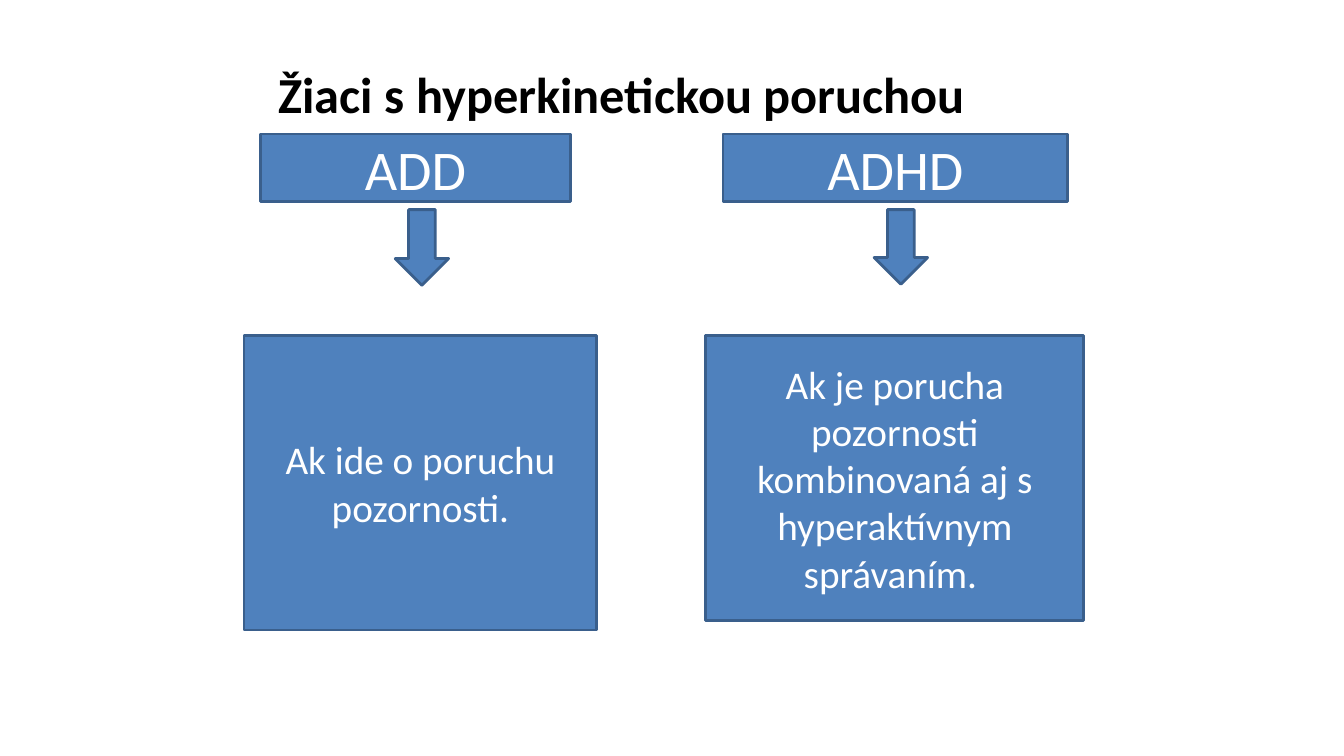
"""Build a slide comparing the two forms of hyperkinetic disorder."""
import pptx
import pptx.dml.color
import pptx.enum.shapes
import pptx.enum.text
import pptx.util

PX = 9144
SLIDE_SIZE = (1333, 750)
FONT = "Calibri"
COLORS = {"fill": "4F81BD", "border": "3A5F8C", "light": "FFFFFF", "dark": "000000"}

HEADING = "Žiaci s hyperkinetickou poruchou"
HEADING_BOX = (167, 30, 900, 125)
LABEL_TOP, LABEL_HEIGHT = 133, 67
ARROW_TOP, ARROW_WIDTH = 208, 53
EXPLANATION_TOP = 333

DISORDERS = [
    {
        "label": "ADD",
        "label_span": (258, 308),
        "arrow_left": 392,
        "arrow_height": 75,
        "explanation": "Ak ide o poruchu pozornosti.",
        "explanation_span": (242, 350),
        "explanation_height": 292,
    },
    {
        "label": "ADHD",
        "label_span": (717, 342),
        "arrow_left": 867,
        "arrow_height": 74,
        "explanation": "Ak je porucha pozornosti kombinovaná aj s hyperaktívnym správaním. ",
        "explanation_span": (700, 375),
        "explanation_height": 283,
    },
]


def rgb(name):
    return pptx.dml.color.RGBColor.from_string(COLORS[name])


def emu(lengths):
    return [pptx.util.Emu(length * PX) for length in lengths]


def write(holder, text, size, color, bold=False):
    frame = holder.text_frame
    frame.word_wrap = True
    frame.vertical_anchor = pptx.enum.text.MSO_ANCHOR.MIDDLE
    paragraph = frame.paragraphs[0]
    paragraph.text = text
    paragraph.alignment = pptx.enum.text.PP_ALIGN.CENTER
    paragraph.font.name = FONT
    paragraph.font.size = pptx.util.Pt(size)
    paragraph.font.bold = bold
    paragraph.font.color.rgb = rgb(color)


def add_block(slide, kind, box):
    block = slide.shapes.add_shape(kind, *emu(box))
    block.shadow.inherit = False
    block.fill.solid()
    block.fill.fore_color.rgb = rgb("fill")
    block.line.color.rgb = rgb("border")
    block.line.width = pptx.util.Pt(2)
    return block


def add_disorder(slide, disorder):
    kinds = pptx.enum.shapes.MSO_SHAPE
    left, width = disorder["label_span"]
    label = add_block(slide, kinds.RECTANGLE, (left, LABEL_TOP, width, LABEL_HEIGHT))
    write(label, disorder["label"], 40, "light")

    arrow_box = (disorder["arrow_left"], ARROW_TOP, ARROW_WIDTH, disorder["arrow_height"])
    add_block(slide, kinds.DOWN_ARROW, arrow_box)

    left, width = disorder["explanation_span"]
    explanation_box = (left, EXPLANATION_TOP, width, disorder["explanation_height"])
    explanation = add_block(slide, kinds.FLOWCHART_PROCESS, explanation_box)
    write(explanation, disorder["explanation"], 28, "light")


def main():
    deck = pptx.Presentation()
    deck.slide_width, deck.slide_height = emu(SLIDE_SIZE)
    slide = deck.slides.add_slide(deck.slide_layouts[6])
    heading = slide.shapes.add_textbox(*emu(HEADING_BOX))
    write(heading, HEADING, 36, "dark", bold=True)
    for disorder in DISORDERS:
        add_disorder(slide, disorder)
    deck.save("out.pptx")


if __name__ == "__main__":
    main()
